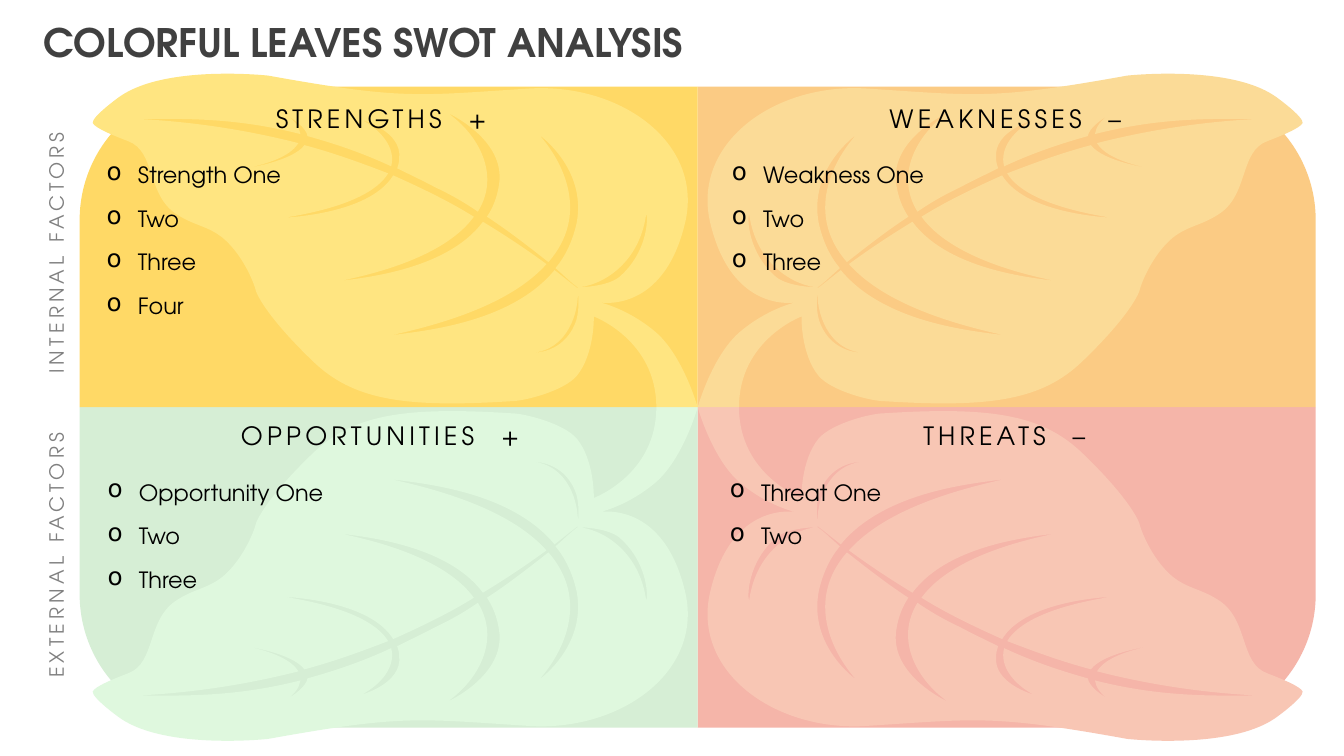
from dataclasses import dataclass

import pptx
import pptx.dml.color
import pptx.enum.shapes
import pptx.enum.text
import pptx.oxml.ns
import pptx.shapes.autoshape
import pptx.slide
import pptx.text.text
import pptx.util
from lxml import etree

Inches = pptx.util.Inches
qn = pptx.oxml.ns.qn
Point = tuple[float, float]
Curve = tuple[float, float, float, float, float, float]


@dataclass(frozen=True)
class Theme:
    font: str = "TeX Gyre Adventor"
    ink: str = "000000"
    title_ink: str = "404040"
    factor_ink: str = "808080"
    title_size: float = 28
    heading_size: float = 18
    item_size: float = 16
    factor_size: float = 14
    tracking: float = 3
    sign_gap: float = 11


@dataclass(frozen=True)
class Quadrant:
    heading: str
    sign: str
    items: tuple[str, ...]
    fill: str
    leaf_fill: str
    on_right: bool
    on_bottom: bool
    heading_left: float
    items_left: float


@dataclass(frozen=True)
class Factor:
    label: str
    top: float


THEME = Theme()
CENTER_X, CENTER_Y = 6.92, 4.04
QUADRANT_WIDTH, QUADRANT_HEIGHT = 6.13, 3.18
CORNER = 0.416

QUADRANTS = (
    Quadrant("THREATS", "–", ("Threat One", "Two"),
             "F5B5A9", "F8C6B4", True, True, 6.97, 7.14),
    Quadrant("OPPORTUNITIES", "+", ("Opportunity One", "Two", "Three"),
             "D6EED5", "DFF8DE", False, True, 0.78, 0.97),
    Quadrant("WEAKNESSES", "–", ("Weakness One", "Two", "Three"),
             "FBCB84", "FBDB97", True, False, 6.98, 7.16),
    Quadrant("STRENGTHS", "+", ("Strength One", "Two", "Three", "Four"),
             "FFD966", "FFE581", False, False, 0.79, 0.96),
)
FACTORS = (Factor("EXTERNAL FACTORS", 5.34), Factor("INTERNAL FACTORS", 2.34))

# Bezier curves of the upper left leaf, in slide inches: two controls and an end.
BLADE_START: Point = (6.92, 4.04)
BLADE: tuple[Curve, ...] = (
    (6.92, 4.04, 6.78, 3.54, 6.51, 3.3), (6.23, 3.06, 5.95, 3, 5.95, 3),
    (5.95, 3, 6.59, 3.12, 6.8, 2.19), (6.97, 1.4, 6.13, 0.81, 5.22, 0.88),
    (4.14, 0.95, 3.99, 0.99, 2.66, 0.75), (2.66, 0.75, 1.66, 0.64, 1.2, 0.95),
    (1.17, 0.97, 0.91, 1.16, 0.92, 1.22), (0.94, 1.27, 1.14, 1.35, 1.27, 1.4),
    (1.55, 1.5, 1.45, 1.94, 1.76, 2.13), (1.93, 2.24, 2.06, 2.24, 2.21, 2.36),
    (2.39, 2.51, 2.51, 2.77, 2.54, 2.89), (2.54, 2.89, 2.61, 3.11, 3.11, 3.59),
    (3.5, 3.96, 3.99, 4.05, 5.07, 3.98), (5.2, 3.98, 5.59, 3.88, 5.72, 3.73),
    (5.9, 3.51, 5.89, 3.14, 5.89, 3.14), (5.89, 3.14, 6.51, 3.37, 6.51, 4.04),
)
VEINS_START: Point = (5.73, 2.88)
VEINS: tuple[Curve, ...] = (
    (5.74, 2.95, 5.75, 3.11, 5.7, 3.22), (5.58, 3.5, 5.31, 3.5, 5.27, 3.5),
    (5.63, 3.48, 5.75, 3.09, 5.73, 2.86), (5.65, 2.8, 5.58, 2.74, 5.5, 2.68),
    (5.04, 3.24, 4.08, 3.29, 3.86, 3.33), (4.7, 3.15, 5.17, 2.9, 5.42, 2.62),
    (5.23, 2.48, 5.02, 2.34, 4.79, 2.2), (4.42, 2.7, 3.53, 2.76, 3.36, 2.79),
    (4.11, 2.64, 4.52, 2.4, 4.7, 2.15), (4.46, 2, 4.19, 1.87, 3.9, 1.74),
    (3.68, 2.1, 2.96, 2.15, 2.82, 2.16), (3.45, 2.06, 3.75, 1.89, 3.85, 1.72),
    (3.59, 1.62, 3.32, 1.52, 3.02, 1.44), (2.9, 1.6, 2.45, 1.67, 2.38, 1.68),
    (2.73, 1.62, 2.9, 1.52, 2.96, 1.42), (2.49, 1.3, 1.96, 1.21, 1.37, 1.18),
    (1.8, 1.18, 2.31, 1.16, 2.98, 1.33), (2.97, 1.26, 2.92, 1.19, 2.84, 1.14),
    (2.83, 1.13, 2.82, 1.12, 2.81, 1.12), (2.81, 1.12, 2.82, 1.12, 2.84, 1.14),
    (2.91, 1.18, 3.04, 1.27, 3.05, 1.35), (3.3, 1.42, 3.58, 1.51, 3.88, 1.65),
    (3.93, 1.47, 3.78, 1.29, 3.59, 1.19), (3.59, 1.19, 3.99, 1.3, 3.96, 1.57),
    (3.96, 1.61, 3.95, 1.64, 3.94, 1.67), (4.06, 1.73, 4.19, 1.79, 4.32, 1.86),
    (4.47, 1.93, 4.61, 2.01, 4.74, 2.1), (4.97, 1.73, 4.74, 1.33, 4.44, 1.12),
    (4.44, 1.12, 5.02, 1.38, 4.95, 1.83), (4.93, 1.96, 4.89, 2.06, 4.83, 2.15),
    (5.06, 2.3, 5.26, 2.46, 5.44, 2.6), (5.85, 2.13, 5.59, 1.61, 5.35, 1.34),
    (5.35, 1.34, 5.82, 1.67, 5.72, 2.21), (5.68, 2.39, 5.61, 2.54, 5.51, 2.66),
    (5.59, 2.73, 5.66, 2.8, 5.73, 2.85), (5.94, 2.84, 6.34, 2.64, 6.41, 2.12),
    (6.43, 2.17, 6.42, 2.51, 6.14, 2.75), (6.01, 2.85, 5.73, 2.85, 5.73, 2.85),
)


def mirror(x: float, y: float, quadrant: Quadrant) -> tuple[int, int]:
    """Carry a point of the upper left leaf into the quadrant."""
    return (Inches(2 * CENTER_X - x if quadrant.on_right else x),
            Inches(2 * CENTER_Y - y if quadrant.on_bottom else y))


def paint(shape: pptx.shapes.autoshape.Shape, color: str) -> None:
    shape.shadow.inherit = False
    shape.fill.solid()
    shape.fill.fore_color.rgb = pptx.dml.color.RGBColor.from_string(color)
    shape.line.fill.background()


def add_panel(page: pptx.slide.Slide, quadrant: Quadrant) -> None:
    left = CENTER_X if quadrant.on_right else CENTER_X - QUADRANT_WIDTH
    top = CENTER_Y if quadrant.on_bottom else CENTER_Y - QUADRANT_HEIGHT
    panel = page.shapes.add_shape(
        pptx.enum.shapes.MSO_SHAPE.ROUND_1_RECTANGLE, Inches(left), Inches(top),
        Inches(QUADRANT_WIDTH), Inches(QUADRANT_HEIGHT))
    panel.adjustments[0] = CORNER
    frame = panel.element.spPr.get_or_add_xfrm()
    if not quadrant.on_right:
        frame.set("flipH", "1")
    if quadrant.on_bottom:
        frame.set("flipV", "1")
    paint(panel, quadrant.fill)


def add_leaf(page: pptx.slide.Slide, quadrant: Quadrant) -> None:
    """Build the leaf through the curve ends, then bend each segment."""
    builder = page.shapes.build_freeform(*mirror(*BLADE_START, quadrant))
    builder.add_line_segments([mirror(*curve[4:], quadrant) for curve in BLADE])
    builder.move_to(*mirror(*VEINS_START, quadrant))
    builder.add_line_segments([mirror(*curve[4:], quadrant) for curve in VEINS])
    leaf = builder.convert_to_shape()
    segments = list(leaf.element.iter(qn("a:lnTo")))
    for segment, curve in zip(segments, BLADE + VEINS):
        bend = etree.Element(qn("a:cubicBezTo"))
        for index in (0, 2, 4):
            x, y = mirror(*curve[index:index + 2], quadrant)
            etree.SubElement(bend, qn("a:pt"), x=str(x - leaf.left), y=str(y - leaf.top))
        segment.getparent().replace(segment, bend)
    paint(leaf, quadrant.leaf_fill)


def add_box(page: pptx.slide.Slide, left: float, top: float, width: float,
            height: float) -> pptx.shapes.autoshape.Shape:
    box = page.shapes.add_textbox(Inches(left), Inches(top), Inches(width), Inches(height))
    box.text_frame.word_wrap = True
    box.text_frame.auto_size = pptx.enum.text.MSO_AUTO_SIZE.SHAPE_TO_FIT_TEXT
    return box


def add_span(para: pptx.text.text._Paragraph, text: str, size: float, color: str,
             bold: bool = False, tracking: float = 0) -> None:
    span = para.add_run()
    span.text = text
    span.font.name = THEME.font
    span.font.size = pptx.util.Pt(size)
    span.font.bold = bold
    span.font.color.rgb = pptx.dml.color.RGBColor.from_string(color)
    if tracking:
        span.font._element.set("spc", str(round(tracking * 100)))


def add_bullet(para: pptx.text.text._Paragraph) -> None:
    properties = para._p.get_or_add_pPr()
    properties.set("marL", str(Inches(0.31)))
    properties.set("indent", str(Inches(-0.31)))
    color = etree.SubElement(properties, qn("a:buClr"))
    etree.SubElement(color, qn("a:srgbClr"), val=THEME.ink)
    etree.SubElement(properties, qn("a:buSzPct"), val="110000")
    etree.SubElement(properties, qn("a:buChar"), char="o")


def add_heading(page: pptx.slide.Slide, quadrant: Quadrant) -> None:
    top = 4.12 if quadrant.on_bottom else 0.98
    para = add_box(page, quadrant.heading_left, top, 5.98, 0.4).text_frame.paragraphs[0]
    para.alignment = pptx.enum.text.PP_ALIGN.CENTER
    for text, tracking in ((quadrant.heading, THEME.tracking), (" ", THEME.sign_gap),
                           (quadrant.sign, THEME.tracking)):
        add_span(para, text, THEME.heading_size, THEME.ink, tracking=tracking)


def add_items(page: pptx.slide.Slide, quadrant: Quadrant) -> None:
    top = 4.7 if quadrant.on_bottom else 1.55
    height = 0.44 * len(quadrant.items) - 0.07
    frame = add_box(page, quadrant.items_left, top, 5.83, height).text_frame
    for index, item in enumerate(quadrant.items):
        para = frame.add_paragraph() if index else frame.paragraphs[0]
        add_bullet(para)
        para.space_after = pptx.util.Pt(12)
        add_span(para, item, THEME.item_size, THEME.ink)


def add_factor(page: pptx.slide.Slide, factor: Factor) -> None:
    box = add_box(page, -0.94, factor.top, 3, 0.34)
    box.rotation = 270
    para = box.text_frame.paragraphs[0]
    para.alignment = pptx.enum.text.PP_ALIGN.CENTER
    add_span(para, factor.label, THEME.factor_size, THEME.factor_ink, tracking=THEME.tracking)


def main() -> None:
    deck = pptx.Presentation()
    deck.slide_width, deck.slide_height = Inches(13.33), Inches(7.5)
    page = deck.slides.add_slide(deck.slide_layouts[6])
    for draw in (add_panel, add_leaf, add_heading, add_items):
        for quadrant in QUADRANTS:
            draw(page, quadrant)
    for factor in FACTORS:
        add_factor(page, factor)
    title = add_box(page, 0.33, 0.13, 7.42, 0.57).text_frame.paragraphs[0]
    add_span(title, "COLORFUL LEAVES SWOT ANALYSIS", THEME.title_size, THEME.title_ink, bold=True)
    deck.save("out.pptx")


if __name__ == "__main__":
    main()
